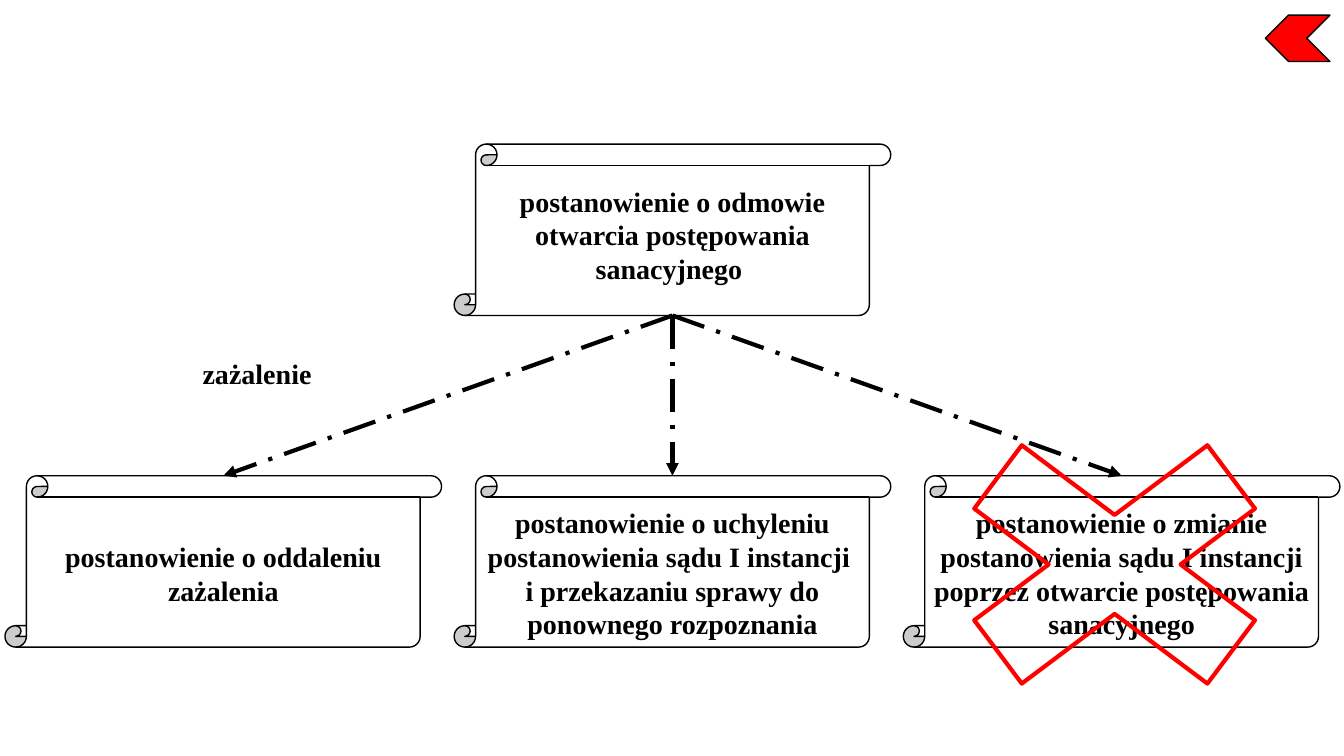
from lxml.etree import SubElement
from pptx import Presentation
from pptx.dml.color import RGBColor
from pptx.enum.dml import MSO_LINE
from pptx.enum.shapes import MSO_CONNECTOR, MSO_SHAPE
from pptx.enum.text import MSO_ANCHOR, MSO_AUTO_SIZE, PP_ALIGN
from pptx.oxml.ns import qn
from pptx.util import Inches, Pt

COLORS = {"ink": "000000", "paper": "FFFFFF", "alert": "FF0000"}
FONT = "Times New Roman"

# Grid in inches: three columns of scrolls on two rows
COLUMN_LEFT, COLUMN_PITCH = 0.05, 4.455
ROW_TOP, ROW_PITCH = 1.43, 3.29
SCROLL_W, SCROLL_H = 4.33, 1.7
LINE_H, TEXT_PADDING = 0.335, 0.1
NARROW, WIDE = 3.52, 4.38

# Column, text width, rendered line count, paragraphs
OUTCOMES = [
    (0, NARROW, 2, ["postanowienie o oddaleniu zażalenia"]),
    (1, WIDE, 4, ["postanowienie o uchyleniu postanowienia sądu I instancji ",
                  "i przekazaniu sprawy do ponownego rozpoznania"]),
    (2, WIDE, 4, ["postanowienie o zmianie postanowienia sądu I instancji "
                  "poprzez otwarcie postępowania sanacyjnego"]),
]


def color(name):
    return RGBColor.from_string(COLORS[name])


def cell(column, row):
    return COLUMN_LEFT + column * COLUMN_PITCH, ROW_TOP + row * ROW_PITCH


def add_figure(slide, preset, box, fill, outline, weight):
    figure = slide.shapes.add_shape(preset, *map(Inches, box))
    figure.shadow.inherit = False
    if fill:
        figure.fill.solid()
        figure.fill.fore_color.rgb = color(fill)
    else:
        figure.fill.background()
    figure.line.color.rgb = color(outline)
    figure.line.width = Pt(weight)
    return figure


def add_scroll(slide, column, row):
    box = (*cell(column, row), SCROLL_W, SCROLL_H)
    return add_figure(slide, MSO_SHAPE.VERTICAL_SCROLL, box, "paper", "ink", 1)


def add_label(slide, box, paragraphs, wrap=True):
    label = slide.shapes.add_textbox(*map(Inches, box))
    frame = label.text_frame
    frame.text = "\n".join(paragraphs)
    frame.word_wrap = wrap
    frame.auto_size = MSO_AUTO_SIZE.SHAPE_TO_FIT_TEXT
    frame.vertical_anchor = MSO_ANCHOR.TOP
    for paragraph in frame.paragraphs:
        paragraph.alignment = PP_ALIGN.CENTER
        paragraph.font.name = FONT
        paragraph.font.size = Pt(20)
        paragraph.font.bold = True
        paragraph.font.color.rgb = color("ink")


def add_scroll_label(slide, column, row, width, lines, paragraphs, drop):
    left, top = cell(column, row)
    height = lines * LINE_H + TEXT_PADDING
    box = (left + (SCROLL_W - width) / 2,
           top + (SCROLL_H - height) / 2 + drop, width, height)
    add_label(slide, box, paragraphs)


def add_arrow(slide, decision, outcome):
    arrow = slide.shapes.add_connector(MSO_CONNECTOR.STRAIGHT, 0, 0, 0, 0)
    arrow.begin_connect(decision, 2)
    arrow.end_connect(outcome, 0)
    arrow.line.color.rgb = color("ink")
    arrow.line.width = Pt(3)
    arrow.line.dash_style = MSO_LINE.LONG_DASH_DOT
    SubElement(arrow.line._get_or_add_ln(), qn("a:tailEnd"), type="triangle")
    SubElement(arrow._element.spPr, qn("a:effectLst"))


def main():
    presentation = Presentation()
    presentation.slide_width = Inches(13.33)
    presentation.slide_height = Inches(7.5)
    slide = presentation.slides.add_slide(presentation.slide_layouts[6])

    # Back marker in the corner
    back = add_figure(slide, MSO_SHAPE.CHEVRON, (12.55, 0.15, 0.64, 0.46),
                      "alert", "ink", 1)
    back.rotation = 180

    # Contested decision and the complaint against it
    decision = add_scroll(slide, 1, 0)
    add_scroll_label(slide, 1, 0, NARROW, 3,
                     ["postanowienie o odmowie otwarcia postępowania sanacyjnego "],
                     drop=0.05)
    add_label(slide, (1.91, 3.49, 1.28, 0.44), ["zażalenie"], wrap=False)

    # Possible outcomes
    for column, width, lines, paragraphs in OUTCOMES:
        outcome = add_scroll(slide, column, 1)
        add_scroll_label(slide, column, 1, width, lines, paragraphs, drop=0.12)
        add_arrow(slide, decision, outcome)

    # Cross over the excluded outcome
    add_figure(slide, MSO_SHAPE.MATH_MULTIPLY, (8.83, 3.93, 4.45, 3.34),
               None, "alert", 3)

    presentation.save("out.pptx")


if __name__ == "__main__":
    main()
